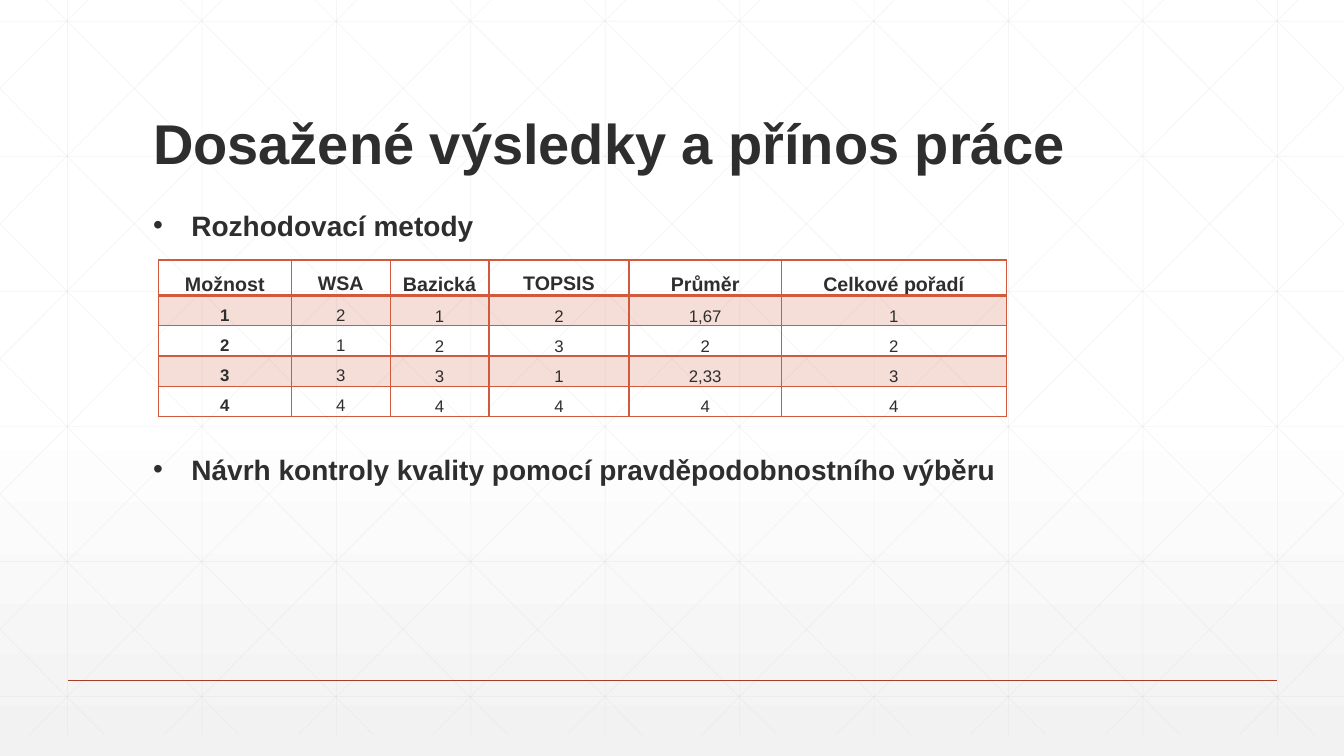
"""Build the slide on decision methods and the results of the thesis."""
from lxml import etree
from pptx import Presentation, util as u
from pptx.dml.color import RGBColor
from pptx.enum import shapes, text
from pptx.oxml import ns

COLORS = {"ink": "2D2E2D", "rust": "D15A3E", "rule": "A43F27",
          "grid": "D9D9D9", "white": "FFFFFF", "mist": "F2F2F2"}
WIDE, TOP, LOW = 13.33, -0.21, 7.29
STEP, RUN = 4 / 3, 7.455

deck = Presentation()
deck.slide_width, deck.slide_height = u.Inches(WIDE), u.Inches(7.5)
slide = deck.slides.add_slide(deck.slide_layouts[6])

back = slide.background.fill
back.gradient()
back.gradient_angle = 270
for stop, (place, name) in zip(back.gradient_stops, [(0.53, "white"), (1, "mist")]):
    stop.position = place
    stop.color.rgb = RGBColor.from_string(COLORS[name])


def draw_line(x1, y1, x2, y2, name, width, alpha=None):
    line = slide.shapes.add_connector(
        shapes.MSO_CONNECTOR.STRAIGHT, *[u.Inches(v) for v in (x1, y1, x2, y2)])
    line.line.color.rgb = RGBColor.from_string(COLORS[name])
    line.line.width = u.Pt(width)
    props = line._element.spPr
    etree.SubElement(props, ns.qn("a:effectLst"))
    if alpha:
        tint = props.find(".//" + ns.qn("a:srgbClr"))
        etree.SubElement(tint, ns.qn("a:alpha"), val=str(alpha * 1000))


def add_text(words, left, top, width, height, size, bullet=False):
    box = slide.shapes.add_textbox(*[u.Inches(v) for v in (left, top, width, height)])
    frame = box.text_frame
    frame.word_wrap = True
    para = frame.paragraphs[0]
    para.text = words
    para.font.name, para.font.size, para.font.bold = "Arial", u.Pt(size), True
    para.font.color.rgb = RGBColor.from_string(COLORS["ink"])
    if bullet:
        props = para._p.get_or_add_pPr()
        props.set("marL", str(u.Inches(0.38)))
        props.set("indent", str(u.Inches(-0.38)))
        mark = etree.Element(ns.qn("a:buChar"), char="•")
        props.insert(0, mark)
        face = etree.Element(ns.qn("a:buFont"), typeface="Arial")
        props.insert(0, face)
    return frame


grid = [(0.67 + STEP * i, TOP, 0.67 + STEP * i, LOW) for i in range(10)]
grid += [(0, 0.21 + 1.34 * i, WIDE, 0.21 + 1.34 * i) for i in range(6)]
slope = (LOW - TOP) / RUN
for i in range(-5, 10):
    start = 0.25 + STEP * i
    x1, x2 = max(0, start), min(WIDE, start + RUN)
    y1, y2 = [TOP + (x - start) * slope for x in (x1, x2)]
    grid += [(x1, y1, x2, y2), (WIDE - x1, y1, WIDE - x2, y2)]
for ends in grid:
    draw_line(*ends, "grid", 0.5, 25)
draw_line(0.67, 6.75, 12.67, 6.75, "rule", 1)

title = add_text("Dosažené výsledky a přínos práce", 1.42, 0.55, 10.5, 1.25, 40)
title.vertical_anchor = text.MSO_ANCHOR.BOTTOM
title.paragraphs[0].line_spacing = 0.9

rows = [
    ["Možnost", "WSA", "Bazická", "TOPSIS", "Průměr", "Celkové pořadí"],
    ["1", "2", "1", "2", "1,67", "1"],
    ["2", "1", "2", "3", "2", "2"],
    ["3", "3", "3", "1", "2,33", "3"],
    ["4", "4", "4", "4", "4", "4"],
]
widths = [1.32, 0.98, 0.98, 1.39, 1.51, 2.23]
table = slide.shapes.add_table(
    len(rows), len(widths), u.Inches(1.57), u.Inches(2.58),
    u.Inches(sum(widths)), u.Inches(1.5)).table
table.first_row = table.horz_banding = False
for col, width in zip(table.columns, widths):
    col.width = u.Inches(width)

for r, row in enumerate(rows):
    table.rows[r].height = u.Inches(0.3)
    centred = (1, 3) if r == 0 else (0, 1)
    for c, words in enumerate(row):
        cell = table.cell(r, c)
        cell.margin_left = cell.margin_right = u.Inches(0.04)
        cell.margin_top = cell.margin_bottom = 0
        cell.vertical_anchor = (text.MSO_ANCHOR.MIDDLE if c in centred
                                else text.MSO_ANCHOR.BOTTOM)
        para = cell.text_frame.paragraphs[0]
        para.text = words
        para.alignment = text.PP_ALIGN.CENTER
        para.line_spacing, para.space_after = 1.5, u.Pt(10)
        para.font.name, para.font.size = "Arial", u.Pt(12 if r else 14)
        para.font.bold = r == 0 or c == 0
        para.font.color.rgb = RGBColor.from_string(COLORS["ink"])
        props = cell._tc.get_or_add_tcPr()
        for side in "LRTB":
            thick = (r, side) in [(0, "B"), (1, "T")]
            edge = etree.SubElement(props, ns.qn("a:ln" + side),
                                    w=str(u.Pt(2 if thick else 1)))
            paint = etree.SubElement(edge, ns.qn("a:solidFill"))
            etree.SubElement(paint, ns.qn("a:srgbClr"), val=COLORS["rust"])
        if r % 2:
            cell.fill.solid()
            cell.fill.fore_color.rgb = RGBColor.from_string(COLORS["rust"])
            tint = props.find(ns.qn("a:solidFill"))[0]
            etree.SubElement(tint, ns.qn("a:alpha"), val="20000")
        else:
            cell.fill.background()

add_text("Návrh kontroly kvality pomocí pravděpodobnostního výběru",
         1.42, 4.44, 8.56, 0.44, 20, True)
add_text("Rozhodovací metody", 1.42, 2.02, 3.94, 0.44, 20, True)

deck.save("out.pptx")
